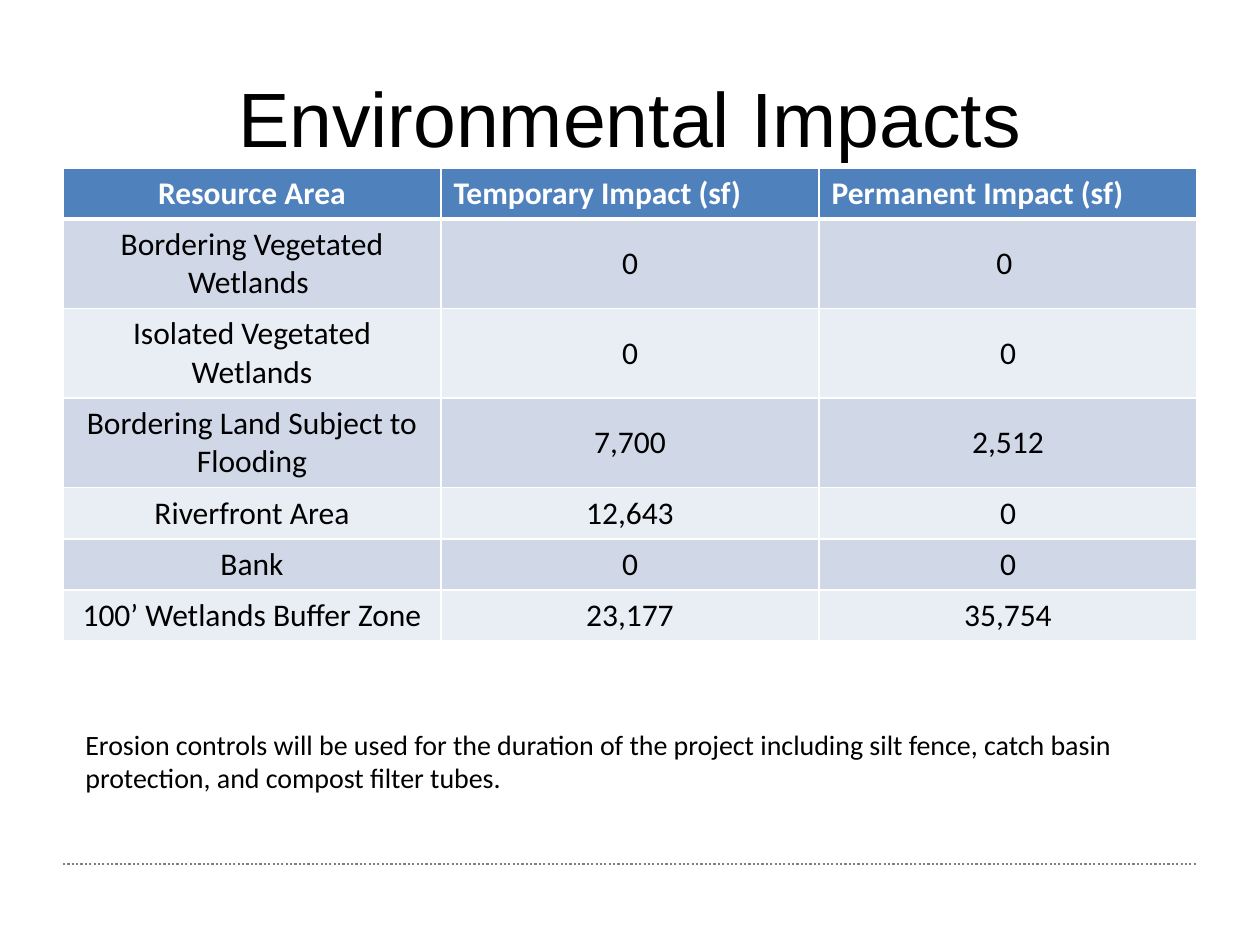
from lxml import etree
from pptx import Presentation
from pptx.dml.color import RGBColor
from pptx.enum.dml import MSO_LINE
from pptx.enum.shapes import MSO_CONNECTOR
from pptx.enum.text import MSO_ANCHOR, PP_ALIGN
from pptx.oxml.ns import qn
from pptx.util import Pt

CENTER, LEFT = PP_ALIGN.CENTER, PP_ALIGN.LEFT
MIDDLE, TOP = MSO_ANCHOR.MIDDLE, MSO_ANCHOR.TOP
DOTTED = MSO_LINE.ROUND_DOT
STRAIGHT = MSO_CONNECTOR.STRAIGHT

# Content
TITLE = "Environmental Impacts"
HEADER = ("Resource Area", "Temporary Impact (sf)", "Permanent Impact (sf)")
IMPACTS = [
    ("Bordering Vegetated Wetlands ", "0", "0 "),
    ("Isolated Vegetated Wetlands", "0", "0"),
    ("Bordering Land Subject to Flooding", "7,700", "2,512"),
    ("Riverfront Area", "12,643", "0"),
    ("Bank", "0", "0"),
    ("100’ Wetlands Buffer Zone", "23,177", "35,754"),
]
NOTE = ("Erosion controls will be used for the duration of the project including "
        "silt fence, catch basin protection, and compost filter tubes.")

THEME = {
    "title_font": "Arial", "body_font": "Calibri",
    "title_size": 44, "table_size": 18, "note_size": 16,
    "text": "000000", "header_text": "FFFFFF", "header_fill": "4F81BD",
    "bands": ("D0D8E8", "E9EDF4"), "border": "FFFFFF", "rule": "808080",
}

# Layout in px, 126 to the inch
PX = 914400 / 126
MARGIN, CONTENT_WIDTH = 63, 1134
TITLE_TOP, TITLE_HEIGHT = 38, 157
TABLE_TOP, ROW_HEIGHT = 168, 51
NOTE_BOX = (73, 721, 1134, 118)
RULE_Y = 864


def px(*lengths):
    return [round(length * PX) for length in lengths]


def color(name):
    return RGBColor.from_string(name)


def write(frame, text, font, size, ink, align=LEFT, bold=False):
    frame.text = text
    para = frame.paragraphs[0]
    para.alignment = align
    style = para.runs[0].font
    style.name, style.size, style.bold = font, Pt(size), bold
    style.color.rgb = color(ink)


def add_borders(cell, is_header):
    properties = cell._tc.get_or_add_tcPr()
    for side in "LRTB":
        width = Pt(3 if is_header and side == "B" else 1)
        line = etree.SubElement(properties, qn("a:ln" + side), w=str(width))
        fill = etree.SubElement(line, qn("a:solidFill"))
        etree.SubElement(fill, qn("a:srgbClr"), val=THEME["border"])


def add_rule(page):
    left, right, y = px(MARGIN, MARGIN + CONTENT_WIDTH, RULE_Y)
    rule = page.shapes.add_connector(STRAIGHT, left, y, right, y)
    rule.line.color.rgb = color(THEME["rule"])
    rule.line.width = Pt(1.25)
    rule.line.dash_style = DOTTED
    etree.SubElement(rule._element.spPr, qn("a:effectLst"))


def add_title(page):
    title = page.shapes.title
    title.left, title.top, title.width, title.height = px(
        MARGIN, TITLE_TOP, CONTENT_WIDTH, TITLE_HEIGHT)
    title.text_frame.vertical_anchor = MIDDLE
    write(title.text_frame, TITLE, THEME["title_font"], THEME["title_size"],
          THEME["text"], CENTER)


def add_impact_table(page):
    rows = [HEADER, *IMPACTS]
    frame = page.shapes.add_table(
        len(rows), len(HEADER),
        *px(MARGIN, TABLE_TOP, CONTENT_WIDTH, ROW_HEIGHT * len(rows)))
    for r, values in enumerate(rows):
        is_header = r == 0
        fill = THEME["header_fill"] if is_header else THEME["bands"][(r - 1) % 2]
        ink = THEME["header_text"] if is_header else THEME["text"]
        for c, value in enumerate(values):
            cell = frame.table.cell(r, c)
            is_value = c > 0
            write(cell.text_frame, value, THEME["body_font"], THEME["table_size"],
                  ink, LEFT if is_header and is_value else CENTER, is_header)
            cell.vertical_anchor = MIDDLE if is_value and not is_header else TOP
            add_borders(cell, is_header)
            cell.fill.solid()
            cell.fill.fore_color.rgb = color(fill)


def add_note(page):
    box = page.shapes.add_textbox(*px(*NOTE_BOX))
    box.text_frame.word_wrap = True
    write(box.text_frame, NOTE, THEME["body_font"], THEME["note_size"], THEME["text"])


def main():
    deck = Presentation()
    deck.slide_width, deck.slide_height = px(1260, 945)
    page = deck.slides.add_slide(deck.slide_layouts.get_by_name("Title Only"))
    add_rule(page)
    add_title(page)
    add_impact_table(page)
    add_note(page)
    deck.save("out.pptx")


if __name__ == "__main__":
    main()
